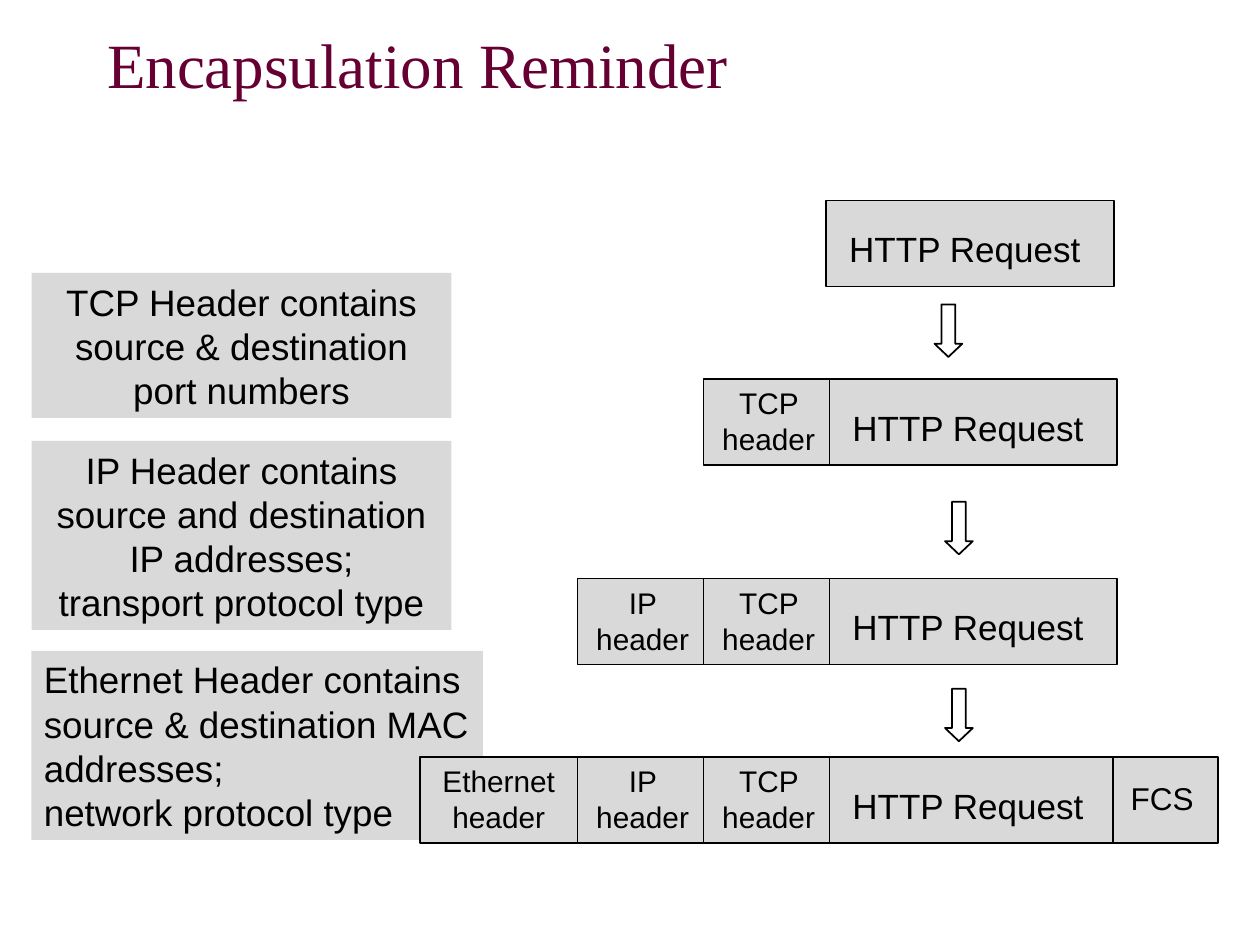
from pptx import Presentation
from pptx import util as u
from pptx.dml.color import RGBColor
from pptx.enum import shapes, text

PLUM = RGBColor(0x66, 0x00, 0x33)
GREY = RGBColor(0xD9, 0xD9, 0xD9)
BLACK = RGBColor(0, 0, 0)
WHITE = RGBColor(0xFF, 0xFF, 0xFF)
LEFT, MID = text.PP_ALIGN.LEFT, text.PP_ALIGN.CENTER
TOP, CORE = text.MSO_ANCHOR.TOP, text.MSO_ANCHOR.MIDDLE
RECT = shapes.MSO_SHAPE.RECTANGLE
ARROW = shapes.MSO_SHAPE.DOWN_ARROW
CELL = u.Inches(1 / 12)  # the slide is a grid of 120 columns by 90 rows


class Deck:
    font = "Arial"

    def __init__(self):
        self.prs = Presentation()
        self.prs.slide_width, self.prs.slide_height = 120 * CELL, 90 * CELL
        self.slide = self.prs.slides.add_slide(self.prs.slide_layouts[5])

    def place(self, item, *spot):
        item.left, item.top, item.width, item.height = (
            int(n * CELL) for n in spot)

    def label(self, item, lines, size, color=BLACK, font=None,
              align=LEFT, anchor=TOP, wrap=True):
        frame = item.text_frame
        frame.word_wrap = wrap
        frame.auto_size = text.MSO_AUTO_SIZE.NONE
        frame.vertical_anchor = anchor
        para = frame.paragraphs[0]
        para.alignment = align
        for i, line in enumerate(lines):
            if i:
                para.add_line_break()
            run = para.add_run()
            run.text = line
            run.font.size = u.Pt(size)
            run.font.name = font or self.font
            run.font.color.rgb = color

    def title(self, words):
        item = self.slide.shapes.title
        self.place(item, 9, 0, 102, 12)
        self.label(item, [words], 36, PLUM, "Times New Roman", anchor=CORE)

    def shape(self, kind, spot, fill=GREY, line=True, home=None):
        item = (home or self.slide).shapes.add_shape(kind, 0, 0, 0, 0)
        self.place(item, *spot)
        item.shadow.inherit = False
        item.fill.solid()
        item.fill.fore_color.rgb = fill
        if line:
            item.line.color.rgb = BLACK
            item.line.width = u.Pt(1)
        else:
            item.line.fill.background()
        return item

    def note(self, spot, lines, align):
        item = self.shape(RECT, spot, line=False)
        self.label(item, lines, 21, align=align, anchor=CORE)

    def arrow(self, col, row):
        item = self.shape(ARROW, (col, row, 2.65, 5), WHITE)
        item.adjustments[0], item.adjustments[1] = 0.5, 0.474

    def header(self, home, col, row, wide, words):
        item = self.shape(RECT, (col, row, wide, 8.2), home=home)
        self.label(item, [words], 17, align=MID)

    def field(self, home, spot, inner, words, size, wrap=True):
        """A framed box with its label set inside it."""
        self.shape(RECT, spot, home=home)
        item = self.shape(RECT, inner, line=False, home=home)
        self.label(item, [words], size, wrap=wrap)

    def packet(self, row, heads=(), col=79, tail=False):
        home = self.slide.shapes.add_group_shape()
        for left, wide, words in heads:
            self.header(home, left, row, wide, words)
        self.field(home, (col, row, 27.4, 8.2),
                   (col + 1, row + 2, 24.5, 5.1), "HTTP Request", 20)
        if tail:
            self.field(home, (106, row, 10, 8.2),
                       (106.5, row + 1.5, 8.4, 4.8), "FCS", 18, wrap=False)


def main():
    deck = Deck()
    deck.title("Encapsulation Reminder")

    # What each header holds
    deck.note((3, 26, 40, 13.8),
              ["TCP Header contains source & destination port numbers"], MID)
    deck.note((3, 42, 40, 18),
              ["IP Header contains source and destination IP addresses;",
               "transport protocol type"], MID)
    deck.note((3, 62, 43, 18),
              ["Ethernet Header contains source & destination MAC addresses;",
               "network protocol type"], LEFT)

    # Steps down the stack
    for col, row in ((89, 29), (90, 47.8), (90, 65.6)):
        deck.arrow(col, row)

    # Packets, one more header on each layer
    heads = [(40, 15, "Ethernet header"), (55, 12.4, "IP header"),
             (67, 12.4, "TCP header")]
    deck.packet(19.1, col=78.7)
    deck.packet(36.1, heads[2:])
    deck.packet(55.1, heads[1:])
    deck.packet(72.1, heads, tail=True)

    deck.prs.save("out.pptx")


if __name__ == "__main__":
    main()
